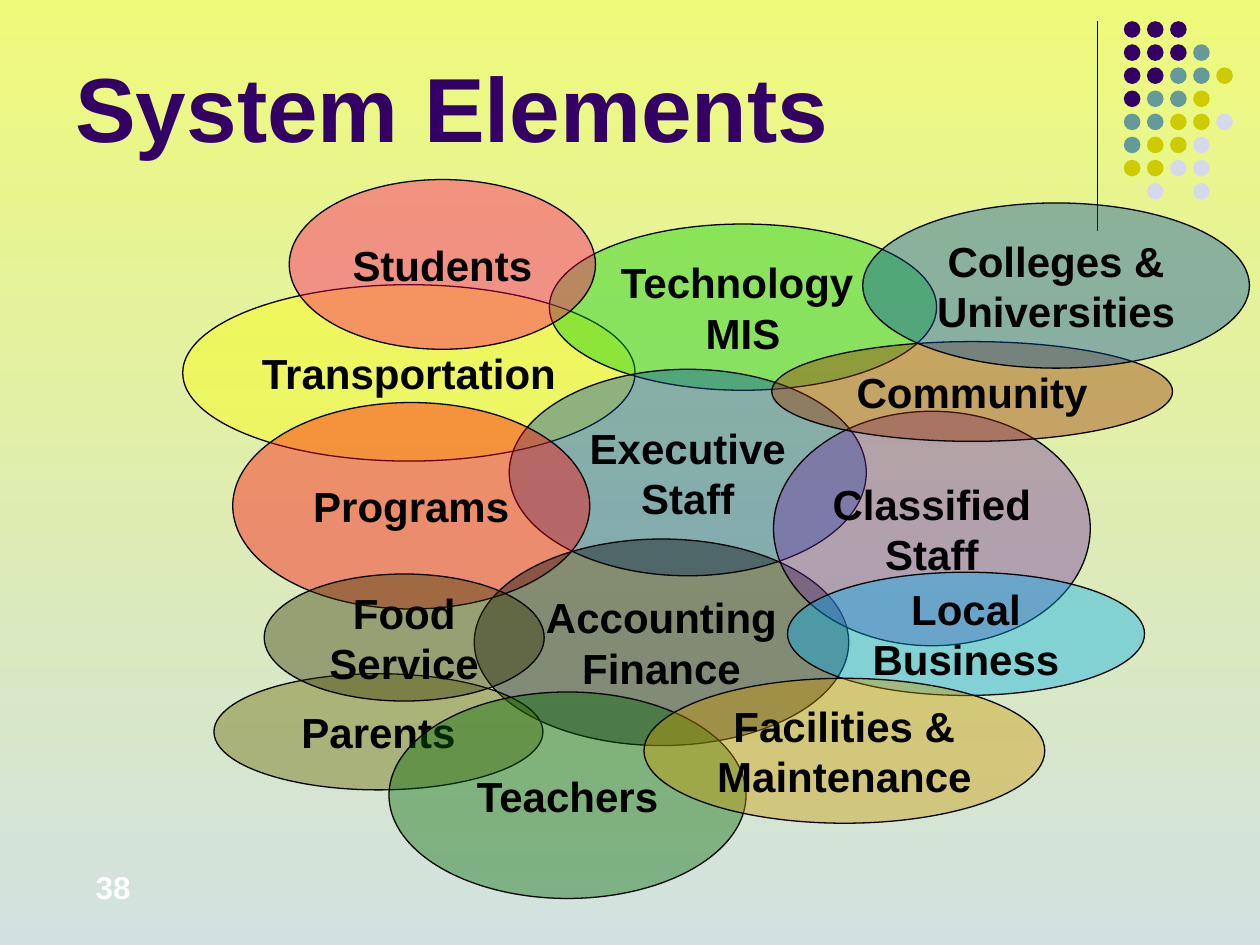
from pptx import Presentation
from pptx.dml.color import RGBColor
from pptx.enum.shapes import MSO_CONNECTOR as CONNECTOR, MSO_SHAPE as SHAPE
from pptx.enum.text import MSO_ANCHOR as ANCHOR, PP_ALIGN as ALIGN
from pptx.oxml.ns import qn
from pptx.util import Pt
from lxml.etree import SubElement

TITLE = "System Elements"
PAGE_NUMBER = "38"
ELEMENTS = [
    (["Transportation"], "FFFF00", 104.4, 162.7, 258.5, 100.8),
    (["Technology ", "MIS"], "00CC00", 313.9, 128, 221.3, 95),
    (["Executive Staff"], "004EA6", 291, 211, 204, 118),
    (["Programs"], "FF0000", 133, 230, 204, 118),
    (["Accounting Finance"], "000000", 271, 308, 214, 118),
    (["Classified", "Staff"], "7030A0", 442, 235, 181, 134),
    (["Local", "Business"], "00B0F0", 450, 327, 204, 70.4),
    (["Community"], "993300", 441, 195.2, 229, 57),
    (["Students"], "FF0066", 165.3, 102.6, 175, 97),
    (["Parents"], "666600", 122.3, 385, 188, 66.4),
    (["Teachers"], "006600", 222.3, 395.4, 204, 118),
    (["Colleges & Universities"], "004EA6", 493, 116, 221, 94.4),
    (["Facilities & Maintenance"], "CC9900", 368, 387.6, 229, 82.8),
    (["Food Service"], "333300", 151, 328, 160, 72.6),
]
DOT_ROWS = ["PPP", "PPPT", "PPTTY", "PTTY", "TTYYL", "TYYL", "YYLL", " L L"]
THEME = {
    "font": "Arial",
    "title": ("330066", 52),
    "label": ("000000", 24),
    "number": ("FFFFFF", 18),
    "outline": "000000",
    "opacity": 40,
    "background": ("EEFA7A", "D1E1E1"),
    "dots": {"P": "330066", "T": "669999", "Y": "CCCC00", "L": "D8D8EC"},
}
DOT_LEFT, DOT_TOP, DOT_SIZE, DOT_PITCH = 642.2, 12.1, 9.5, 13.2


def rgb(value):
    return RGBColor.from_string(value)


def write(frame, lines, style, align=ALIGN.LEFT):
    color, size = THEME[style]
    frame.word_wrap = True
    frame.vertical_anchor = ANCHOR.MIDDLE
    frame.text = "\n".join(lines)
    for paragraph in frame.paragraphs:
        paragraph.alignment = align
        font = paragraph.font
        font.name, font.size, font.bold = THEME["font"], Pt(size), True
        font.color.rgb = rgb(color)


def add_text(slide, text, style, *box):
    write(slide.shapes.add_textbox(*map(Pt, box)).text_frame, [text], style)


def add_ellipse(slide, color, *box):
    ellipse = slide.shapes.add_shape(SHAPE.OVAL, *map(Pt, box))
    ellipse.shadow.inherit = False
    ellipse.fill.solid()
    ellipse.fill.fore_color.rgb = rgb(color)
    return ellipse


def outline(line):
    line.color.rgb = rgb(THEME["outline"])
    line.width = Pt(0.75)


def add_background(slide):
    fill = slide.background.fill
    fill.gradient()
    fill.gradient_angle = 270
    for stop, color in zip(fill.gradient_stops, THEME["background"]):
        stop.color.rgb = rgb(color)


def add_ornament(slide):
    rule = slide.shapes.add_connector(CONNECTOR.STRAIGHT, Pt(627), Pt(12), Pt(627), Pt(132))
    outline(rule.line)
    SubElement(rule.element.spPr, qn("a:effectLst"))
    for row, codes in enumerate(DOT_ROWS):
        for column, code in enumerate(codes):
            if code != " ":
                dot = add_ellipse(slide, THEME["dots"][code],
                                  DOT_LEFT + column * DOT_PITCH, DOT_TOP + row * DOT_PITCH,
                                  DOT_SIZE, DOT_SIZE)
                dot.line.fill.background()


def add_element(slide, lines, color, *box):
    ellipse = add_ellipse(slide, color, *box)
    outline(ellipse.line)
    fill_color = ellipse.element.spPr.find(qn("a:solidFill")).find(qn("a:srgbClr"))
    SubElement(fill_color, qn("a:alpha"), val=str(THEME["opacity"] * 1000))
    write(ellipse.text_frame, lines, "label", ALIGN.CENTER)


def main():
    deck = Presentation()
    deck.slide_width, deck.slide_height = Pt(720), Pt(540)
    slide = deck.slides.add_slide(deck.slide_layouts[6])
    add_background(slide)
    add_ornament(slide)
    add_text(slide, TITLE, "title", 36, 9.4, 594, 102.2)
    add_text(slide, PAGE_NUMBER, "number", 47.5, 492, 60, 30)
    for element in ELEMENTS:
        add_element(slide, *element)
    deck.save("out.pptx")


if __name__ == "__main__":
    main()
